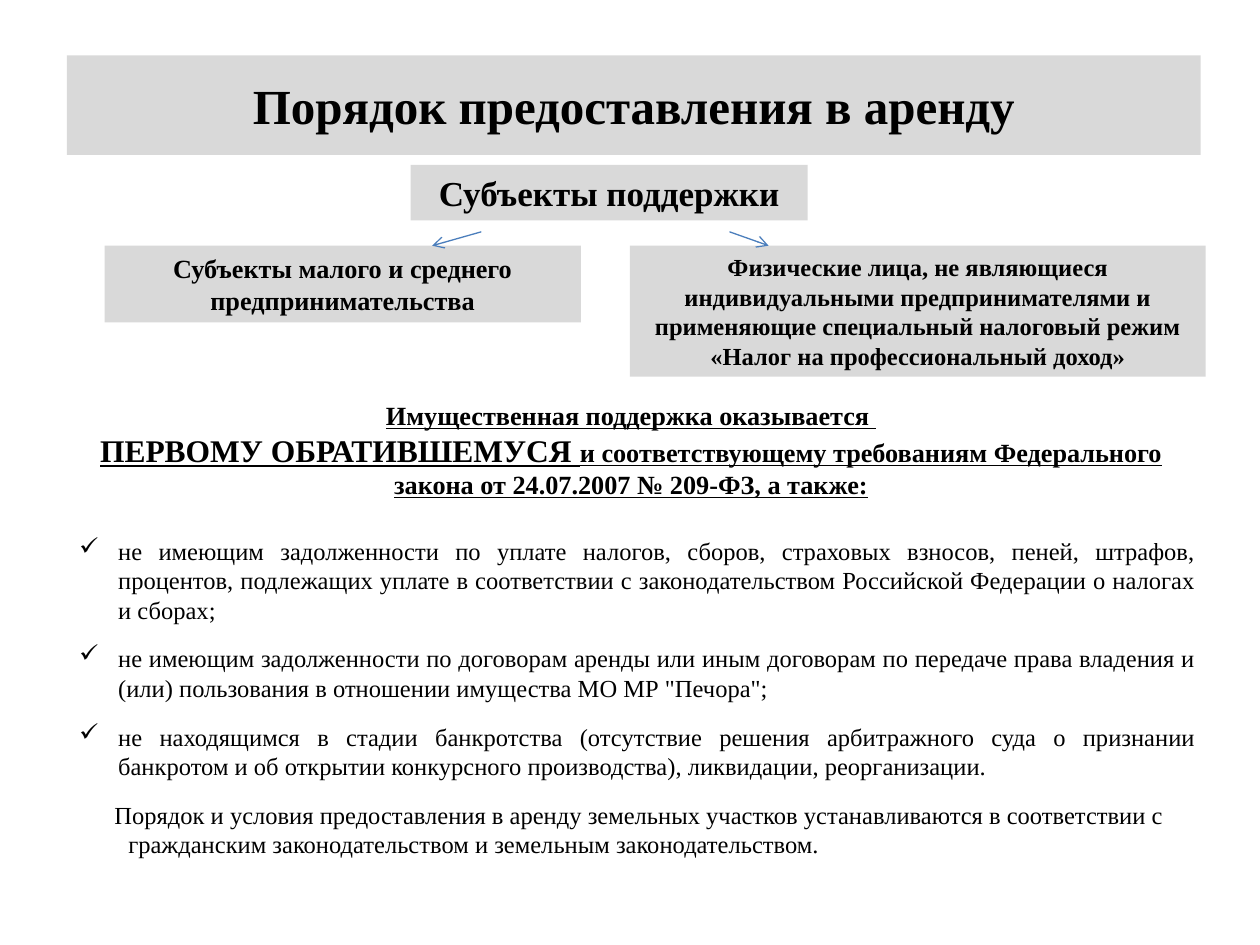
from dataclasses import dataclass

from lxml import etree
from pptx import Presentation
from pptx import util as u
from pptx.dml.color import RGBColor
from pptx.enum import shapes, text
from pptx.oxml import ns

ALIGN = text.PP_ALIGN


@dataclass(frozen=True)
class Theme:
    font: str = "Times New Roman"
    bullet_font: str = "Wingdings"
    check: str = "ü"  # the check mark in Wingdings
    ink: RGBColor = RGBColor(0x00, 0x00, 0x00)
    panel: RGBColor = RGBColor(0xD9, 0xD9, 0xD9)
    arrow: RGBColor = RGBColor(0x4B, 0x7E, 0xBC)
    title: int = 28
    heading: int = 20
    accent: int = 18
    lead: int = 15
    body: int = 14


THEME = Theme()

SUBJECTS = [
    ("Субъекты малого и среднего предпринимательства", THEME.lead,
     (0.83, 1.95, 3.78, 0.61)),
    ("Физические лица, не являющиеся индивидуальными предпринимателями и "
     "применяющие специальный налоговый режим «Налог на профессиональный доход»",
     THEME.body, (5, 1.95, 4.57, 1.04)),
]
ARROWS = [((3.82, 1.84), (3.43, 1.95)), ((5.79, 1.84), (6.1, 1.95))]
CONDITIONS = [
    "не имеющим задолженности по уплате налогов, сборов, страховых взносов, "
    "пеней, штрафов, процентов, подлежащих уплате в соответствии с "
    "законодательством Российской Федерации о налогах и сборах;",
    "не имеющим задолженности по договорам аренды или иным договорам по "
    "передаче права владения и (или) пользования в отношении имущества "
    'МО МР "Печора";',
    "не находящимся в стадии банкротства (отсутствие решения арбитражного суда "
    "о признании банкротом и об открытии конкурсного производства), ликвидации, "
    "реорганизации.",
]
CLOSING = ("Порядок и условия предоставления в аренду земельных участков "
           "устанавливаются в соответствии с гражданским законодательством "
           "и земельным законодательством.")


def inches(box):
    return [u.Inches(v) for v in box]


def add_text(p, words, size, bold=False, underline=False):
    r = p.add_run()
    r.text = words
    f = r.font
    f.name, f.size, f.bold, f.underline = THEME.font, u.Pt(size), bold, underline
    f.color.rgb = THEME.ink


def format_paragraph(p, align, before=0, margin=0, indent=0, bullet=None):
    p.alignment = align
    p.space_before = u.Pt(before)
    ppr = p._p.get_or_add_pPr()
    ppr.set("marL", str(u.Inches(margin)))
    ppr.set("indent", str(u.Inches(indent)))
    if bullet:
        etree.SubElement(ppr, ns.qn("a:buFont"), typeface=THEME.bullet_font,
                         pitchFamily="2", charset="2")
        etree.SubElement(ppr, ns.qn("a:buChar"), char=bullet)


def fill_panel(sp, words, size):
    """Grey panel with one centred bold paragraph."""
    sp.fill.solid()
    sp.fill.fore_color.rgb = THEME.panel
    tf = sp.text_frame
    tf.word_wrap = True
    tf.vertical_anchor = text.MSO_ANCHOR.MIDDLE
    p = tf.paragraphs[0]
    format_paragraph(p, ALIGN.CENTER)
    add_text(p, words, size, bold=True)


def add_title(s, box):
    title = s.shapes.title
    title.left, title.top, title.width, title.height = inches(box)
    fill_panel(title, "Порядок предоставления в аренду", THEME.title)


def add_panel(s, box, words, size):
    sp = s.shapes.add_shape(shapes.MSO_SHAPE.RECTANGLE, *inches(box))
    sp.shadow.inherit = False
    sp.line.fill.background()
    fill_panel(sp, words, size)


def add_arrow(s, start, end):
    arrow = s.shapes.add_connector(shapes.MSO_CONNECTOR.STRAIGHT,
                                   *inches(start + end))
    arrow.line.color.rgb = THEME.arrow
    arrow.line.width = u.Pt(0.75)
    sp_pr = arrow._element.spPr
    etree.SubElement(sp_pr.find(ns.qn("a:ln")), ns.qn("a:tailEnd"), type="arrow")
    etree.SubElement(sp_pr, ns.qn("a:effectLst"))


def add_requirements(s, box):
    tf = s.shapes.add_textbox(*inches(box)).text_frame
    tf.word_wrap = True

    # Underlined lead
    p = tf.paragraphs[0]
    format_paragraph(p, ALIGN.CENTER)
    lead = dict(bold=True, underline=True)
    add_text(p, "Имущественная поддержка оказывается ", THEME.lead, **lead)
    p.add_line_break()
    add_text(p, "ПЕРВОМУ ОБРАТИВШЕМУСЯ ", THEME.accent, **lead)
    add_text(p, "и соответствующему требованиям Федерального закона "
                "от 24.07.2007 № 209-ФЗ, а также:", THEME.lead, **lead)

    # Checked conditions, set apart from the lead
    for i, words in enumerate(CONDITIONS):
        p = tf.add_paragraph()
        format_paragraph(p, ALIGN.JUSTIFY, before=11 if i else 20.5,
                         margin=0.41, indent=-0.31, bullet=THEME.check)
        add_text(p, words, THEME.body)

    # Closing remark
    p = tf.add_paragraph()
    format_paragraph(p, ALIGN.LEFT, before=11, margin=0.49, indent=-0.11)
    add_text(p, CLOSING, THEME.body)


def main():
    prs = Presentation()
    prs.slide_width, prs.slide_height = u.Inches(10), u.Inches(7.5)
    s = prs.slides.add_slide(prs.slide_layouts[5])

    add_title(s, (0.53, 0.44, 9, 0.79))
    add_panel(s, (3.26, 1.31, 3.15, 0.44), "Субъекты поддержки", THEME.heading)
    for words, size, box in SUBJECTS:
        add_panel(s, box, words, size)
    add_requirements(s, (0.43, 3.12, 9.16, 4.17))
    for start, end in ARROWS:
        add_arrow(s, start, end)

    prs.save("out.pptx")


if __name__ == "__main__":
    main()
